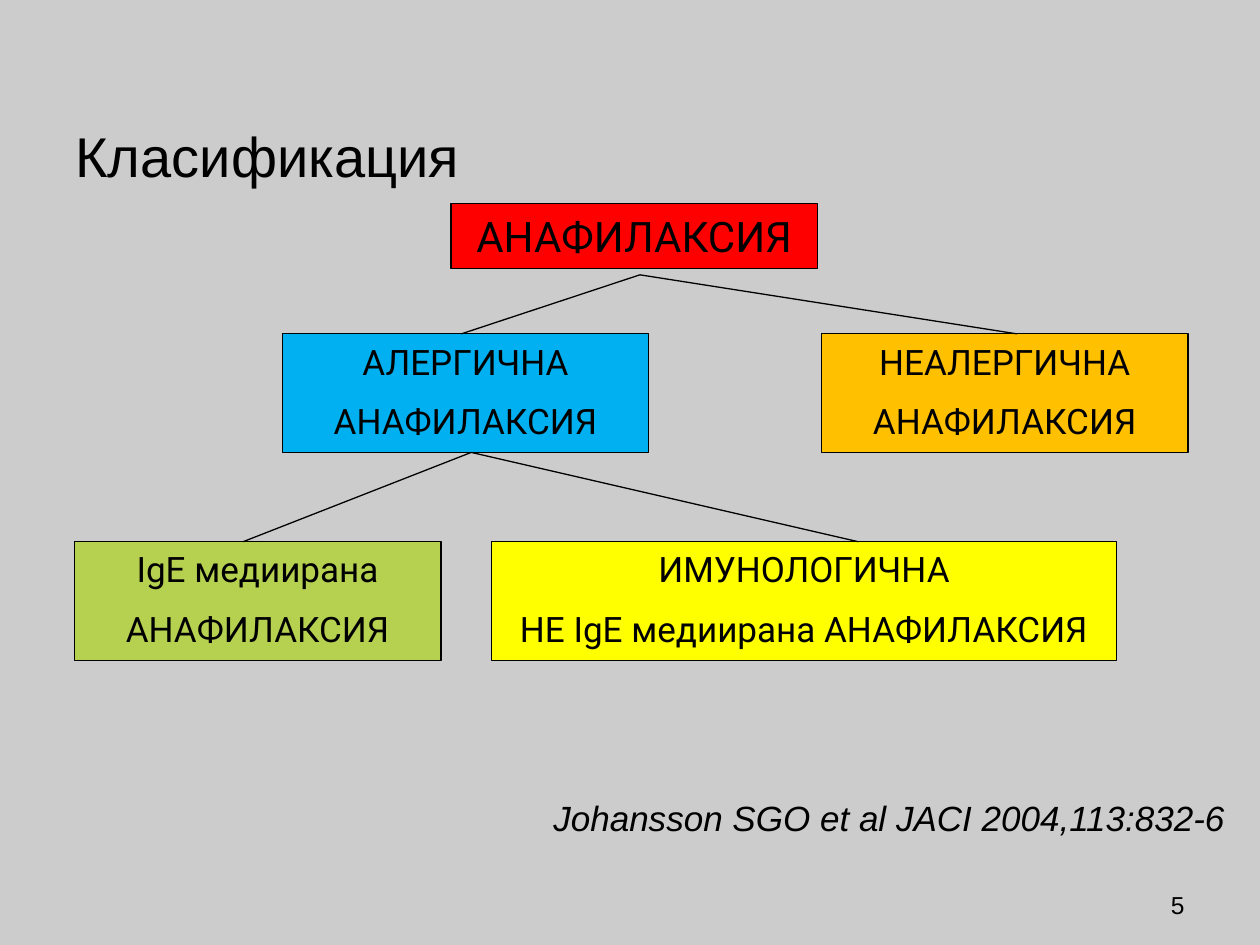
from lxml import etree
from pptx import Presentation
from pptx.dml.color import RGBColor
from pptx.enum.shapes import MSO_CONNECTOR, MSO_SHAPE
from pptx.enum.text import MSO_ANCHOR, PP_ALIGN
from pptx.oxml.ns import qn
from pptx.util import Cm, Pt

LEFT, CENTER, RIGHT = PP_ALIGN.LEFT, PP_ALIGN.CENTER, PP_ALIGN.RIGHT
TOP, BOTTOM = MSO_ANCHOR.TOP, MSO_ANCHOR.BOTTOM
RECTANGLE, STRAIGHT = MSO_SHAPE.RECTANGLE, MSO_CONNECTOR.STRAIGHT
BLACK = "000000"
BOX_W, BOX_H = 7.39, 2.39


def rgb(color):
    return RGBColor.from_string(color)


def set_text(sp, text, size, font, align, anchor=TOP, italic=False):
    tf = sp.text_frame
    tf.word_wrap = True
    tf.vertical_anchor = anchor
    tf.text = text
    for i, p in enumerate(tf.paragraphs):
        p.alignment = align
        if i:
            p.space_before = Pt(size / 2)
        for r in p.runs:
            r.font.size = Pt(size)
            r.font.name = font
            r.font.italic = italic
            r.font.color.rgb = rgb(BLACK)


def add_label(s, box, text, size, align, anchor=TOP, italic=False):
    sp = s.shapes.add_textbox(*map(Cm, box))
    set_text(sp, text, size, "Arial", align, anchor, italic)


def add_node(s, box, text, size, color):
    sp = s.shapes.add_shape(RECTANGLE, *map(Cm, box))
    sp.shadow.inherit = False
    sp.fill.solid()
    sp.fill.fore_color.rgb = rgb(color)
    sp.line.color.rgb = rgb(BLACK)
    sp.line.width = Pt(0.75)
    set_text(sp, text, size, "Roboto", CENTER)


def add_branch(s, start, end):
    line = s.shapes.add_connector(STRAIGHT, *map(Cm, (*start, *end)))
    line.line.color.rgb = rgb(BLACK)
    line.line.width = Pt(0.75)
    etree.SubElement(line._element.spPr, qn("a:effectLst"))


def add_tree(s, left, top):
    """Classification tree: three levels, placed from its top left corner."""
    level2, level3 = top + 2.62, top + 6.81

    # Nodes: x offset, y, width, height, text, size, colour
    nodes = [
        (7.59, top, BOX_W, 1.3, "АНАФИЛАКСИЯ", 24, "FF0000"),
        (4.19, level2, BOX_W, BOX_H, "АЛЕРГИЧНА\nАНАФИЛАКСИЯ", 20, "00B0F0"),
        (15.06, level2, BOX_W, BOX_H, "НЕАЛЕРГИЧНА\nАНАФИЛАКСИЯ", 20, "FFC000"),
        (0, level3, BOX_W, BOX_H, "IgE медиирана\nАНАФИЛАКСИЯ", 20, "B5D14F"),
        (8.41, level3, 12.6, BOX_H,
         "ИМУНОЛОГИЧНА\nНЕ IgE медиирана АНАФИЛАКСИЯ", 20, "FFFF00"),
    ]
    for x, y, w, h, text, size, color in nodes:
        add_node(s, (left + x, y, w, h), text, size, color)

    # Branches: parent point, then x offsets of the children
    branches = [
        (11.4, top + 1.43, level2, (7.8, 19)),
        (8, level2 + BOX_H, level3, (3.4, 15.8)),
    ]
    for x, y, child_y, children in branches:
        for child_x in children:
            add_branch(s, (left + x, y), (left + child_x, child_y))


def main():
    prs = Presentation()
    prs.slide_width, prs.slide_height = Cm(25.4), Cm(19.05)
    s = prs.slides.add_slide(prs.slide_layouts[6])
    s.background.fill.solid()
    s.background.fill.fore_color.rgb = rgb("CCCCCC")

    # Title
    add_label(s, (1.27, 0.76, 22.86, 3.18), "Класификация", 32, LEFT, BOTTOM)
    add_tree(s, 1.5, 4.11)
    # Citation and slide number
    add_label(s, (9.91, 15.93, 15.04, 1.09),
              "Johansson SGO et al JACI 2004,113:832-6", 20, RIGHT, italic=True)
    add_label(s, (18.21, 17.35, 5.92, 1.32), "5", 14, RIGHT, BOTTOM)

    prs.save("out.pptx")


if __name__ == "__main__":
    main()
